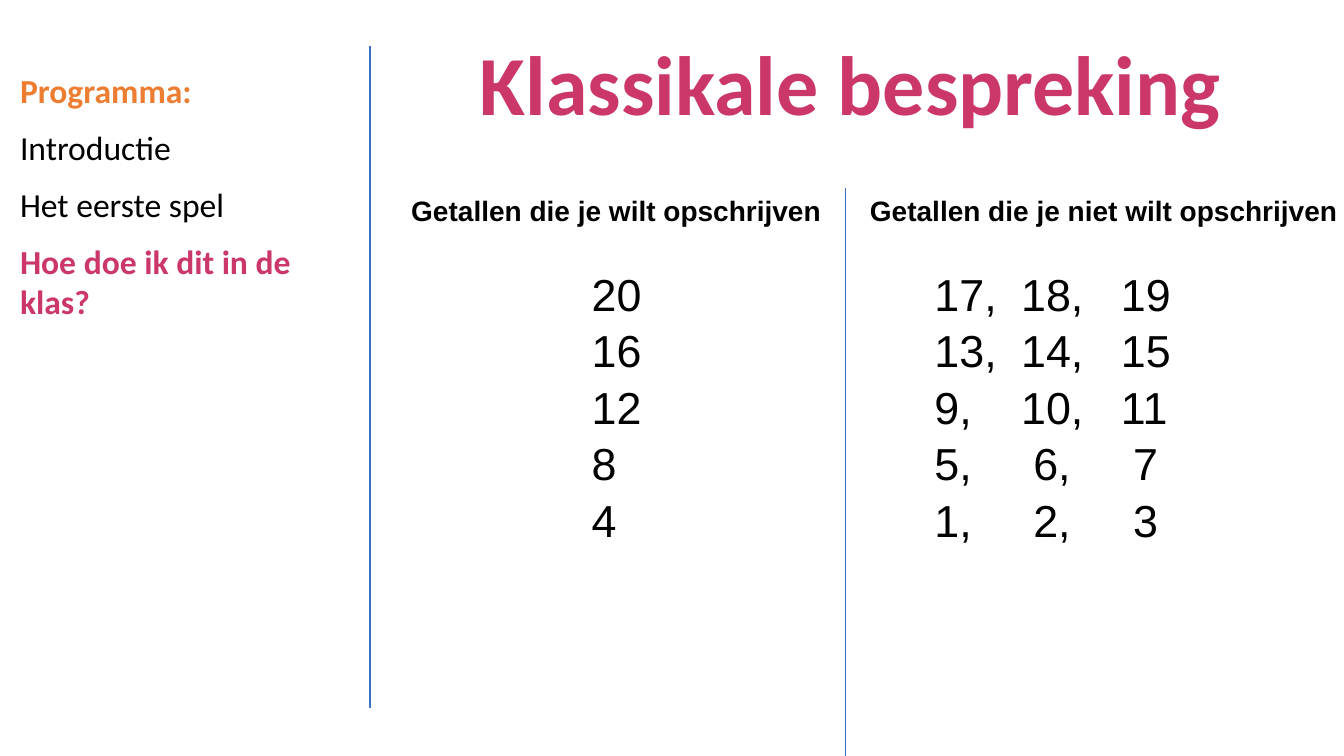
"""Build the slide 'Klassikale bespreking' with its programme and two number columns."""
import pptx
import pptx.util
import pptx.dml.color
import pptx.enum.shapes
import pptx.enum.text
from lxml import etree

Inches, Pt = pptx.util.Inches, pptx.util.Pt
PINK, ORANGE, BLACK, BLUE = "CB3769", "ED7D31", "000000", "3F6FC3"

TITLE = [("Klassikale bespreking ", PINK, True)]
PROGRAMME = [
    ("Programma:", ORANGE, True),
    ("Introductie", BLACK, False),
    ("Het eerste spel", BLACK, False),
    ("Hoe doe ik dit in de klas?", PINK, True),
]
HEADINGS = [
    ("Getallen die je wilt opschrijven", 3.98, 4.41),
    ("Getallen die je niet wilt opschrijven", 8.53, 5.04),
]
WANTED = [20, 16, 12, 8, 4]
UNWANTED = [(n - 3, n - 2, n - 1) for n in WANTED]
DIVIDERS = [(3.67, 0.46, 7.02), (8.39, 1.87, 7.5)]
TAB_STOPS = (0.86, 1.85)
DIGIT_WIDTH = 0.12


def rgb(color):
    return pptx.dml.color.RGBColor.from_string(color)


def add_text(s, box, lines, font, size, gap=0, spacing=None, centred=False):
    tf = s.shapes.add_textbox(*map(Inches, box)).text_frame
    tf.word_wrap = True
    for i, (text, color, bold) in enumerate(lines):
        p = tf.add_paragraph() if i else tf.paragraphs[0]
        p.text = text
        p.space_before = Pt(gap if i else 0)
        p.space_after = Pt(gap)
        if spacing:
            p.line_spacing = spacing
        if centred:
            p.alignment = pptx.enum.text.PP_ALIGN.CENTER
        for r in p.runs:
            r.font.name, r.font.size, r.font.bold = font, Pt(size), bold
            r.font.color.rgb = rgb(color)
    return tf


def add_divider(s, x, top, bottom):
    line = s.shapes.add_connector(
        pptx.enum.shapes.MSO_CONNECTOR.STRAIGHT,
        Inches(x), Inches(top), Inches(x), Inches(bottom))
    line.line.color.rgb = rgb(BLUE)
    line.line.width = Pt(0.75)
    etree.SubElement(line._element.spPr, pptx.oxml.ns.qn("a:effectLst"))


def add_tabs(p, stops):
    tabs = etree.SubElement(p._p.get_or_add_pPr(), pptx.oxml.ns.qn("a:tabLst"))
    for stop in stops:
        etree.SubElement(tabs, pptx.oxml.ns.qn("a:tab"), pos=str(Inches(stop)), algn="l")


def main():
    prs = pptx.Presentation()
    prs.slide_width, prs.slide_height = Inches(13.33), Inches(7.5)
    s = prs.slides.add_slide(prs.slide_layouts[6])

    for divider in DIVIDERS:
        add_divider(s, *divider)
    add_text(s, (3.88, 0.26, 9.3, 5.45), TITLE, "Calibri", 60, gap=6, centred=True)
    add_text(s, (0.1, 0.64, 3.65, 5.95), PROGRAMME, "Calibri", 24, gap=6)
    for text, left, width in HEADINGS:
        add_text(s, (left, 1.87, width, 0.44), [(text, BLACK, True)], "Arial", 20)

    wanted = [(str(n), BLACK, False) for n in WANTED]
    add_text(s, (5.77, 2.57, 0.98, 2.79), wanted, "Arial", 32, spacing=1.05)
    unwanted = [(",\t".join(map(str, row)), BLACK, False) for row in UNWANTED]
    tf = add_text(s, (9.17, 2.57, 3.4, 2.79), unwanted, "Arial", 32, spacing=1.05)
    for p, row in zip(tf.paragraphs, UNWANTED):
        indent = DIGIT_WIDTH if row[1] < 10 else 0
        add_tabs(p, [stop + indent for stop in TAB_STOPS])

    prs.save("out.pptx")


if __name__ == "__main__":
    main()
